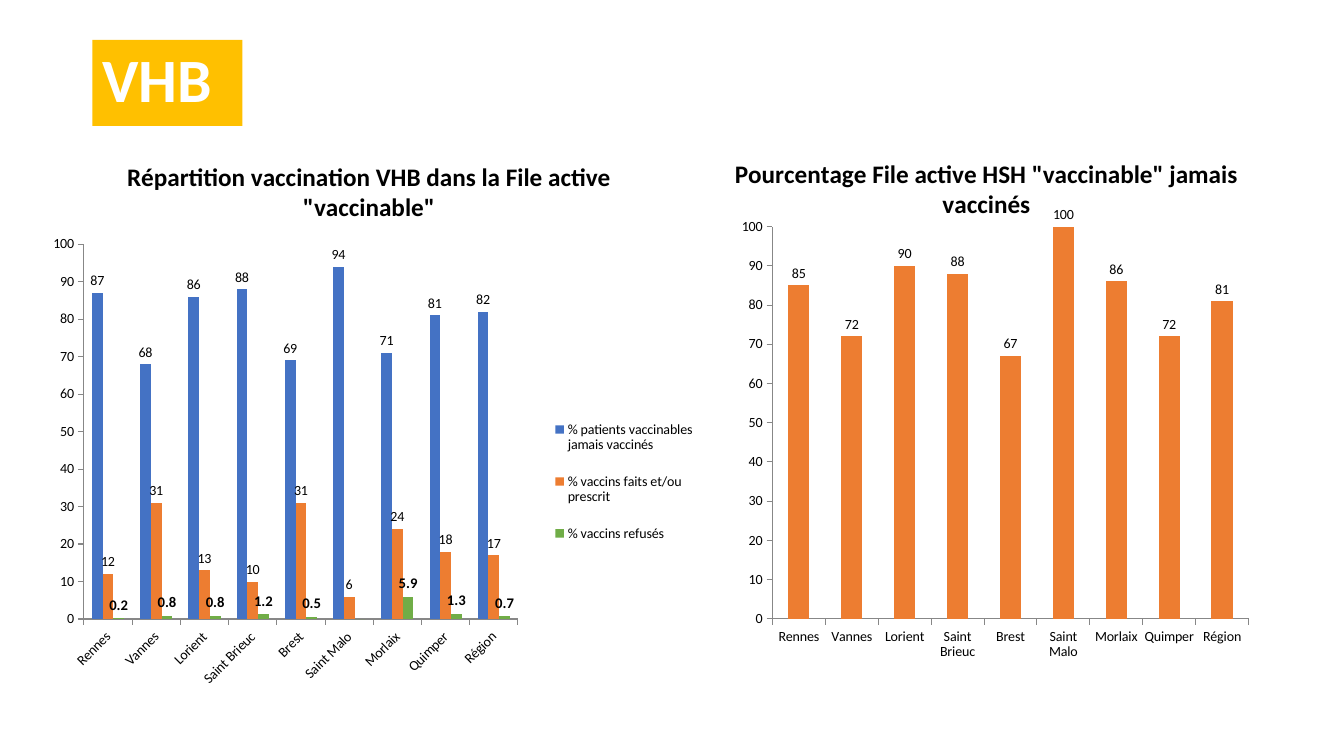
from lxml import etree
from pptx import Presentation
from pptx.chart.data import CategoryChartData as ChartData
from pptx.dml.color import RGBColor
from pptx.enum.chart import XL_CHART_TYPE as ChartType
from pptx.enum.chart import XL_LABEL_POSITION as LabelPosition
from pptx.enum.chart import XL_LEGEND_POSITION as LegendPosition
from pptx.enum.chart import XL_TICK_MARK as TickMark
from pptx.enum.shapes import MSO_SHAPE as ShapeType
from pptx.enum.text import MSO_ANCHOR as Anchor
from pptx.enum.text import PP_ALIGN as Align
from pptx.oxml import parse_xml
from pptx.oxml.ns import nsdecls, qn
from pptx.util import Pt

EMU_PER_PX = 9525
CITIES = ["Rennes", "Vannes", "Lorient", "Saint Brieuc", "Brest",
          "Saint Malo", "Morlaix", "Quimper", "Région"]
BLUE, ORANGE, GREEN = "4472C4", "ED7D31", "70AD47"
VACCINATION = [
    ("% patients vaccinables jamais vaccinés", BLUE,
     [87, 68, 86, 88, 69, 94, 71, 81, 82]),
    ("% vaccins faits et/ou prescrit", ORANGE,
     [12, 31, 13, 10, 31, 6, 24, 18, 17]),
    ("% vaccins refusés", GREEN,
     [0.2, 0.8, 0.8, 1.2, 0.5, 0, 5.9, 1.3, 0.7]),
]
NEVER_VACCINATED = [
    ("% jamais vaccinés", ORANGE, [85, 72, 90, 88, 67, 100, 86, 72, 81]),
]


def px(length):
    return length * EMU_PER_PX


def color(value):
    return RGBColor.from_string(value)


def set_layout(parent, index, box, inner=False):
    for old in parent.findall(qn("c:layout")):
        parent.remove(old)
    layout = parse_xml(f"<c:layout {nsdecls('c')}><c:manualLayout/></c:layout>")
    values = [("layoutTarget", "inner")] if inner else []
    values += [("xMode", "edge"), ("yMode", "edge"), *zip("xywh", box)]
    for name, value in values:
        etree.SubElement(layout[0], qn(f"c:{name}")).set("val", str(value))
    parent.insert(index, layout)


class SlideBuilder:
    """Holds the slide and its style, and adds each kind of element."""

    font = "Calibri"
    text_color = "000000"
    axis_color = "878787"
    chart_size = 10

    def __init__(self, presentation):
        self.slide = presentation.slides.add_slide(presentation.slide_layouts[6])

    def style_font(self, font, size, bold=False, font_color=text_color):
        font.name = self.font
        font.size = Pt(size)
        font.bold = bold
        font.color.rgb = color(font_color)

    def banner(self, text, box, fill):
        shape = self.slide.shapes.add_shape(ShapeType.RECTANGLE, *map(px, box))
        shape.shadow.inherit = False
        shape.fill.solid()
        shape.fill.fore_color.rgb = color(fill)
        shape.line.fill.background()
        frame = shape.text_frame
        frame.word_wrap = True
        frame.vertical_anchor = Anchor.MIDDLE
        paragraph = frame.paragraphs[0]
        paragraph.text = text
        paragraph.alignment = Align.LEFT
        paragraph.line_spacing = 0.9
        self.style_font(paragraph.font, 44, True, "FFFFFF")

    def column_chart(self, title, series, box, plot_box):
        data = ChartData()
        data.categories = CITIES
        for name, _, values in series:
            data.add_series(name, values)
        chart = self.slide.shapes.add_chart(
            ChartType.COLUMN_CLUSTERED, *map(px, box), data).chart
        self.style_font(chart.font, self.chart_size)
        chart.font._element.getparent().getparent().getparent().addprevious(
            parse_xml(f"<c:spPr {nsdecls('c', 'a')}><a:noFill/>"
                      "<a:ln><a:noFill/></a:ln></c:spPr>"))
        chart.has_legend = False
        chart.has_title = True
        paragraph = chart.chart_title.text_frame.paragraphs[0]
        paragraph.text = title
        self.style_font(paragraph.font, 18, True)
        chart.value_axis.minimum_scale = 0
        chart.value_axis.maximum_scale = 100
        chart.value_axis.major_unit = 10
        for axis in (chart.category_axis, chart.value_axis):
            axis.has_major_gridlines = False
            axis.major_tick_mark = TickMark.OUTSIDE
            axis.format.line.color.rgb = color(self.axis_color)
            self.style_font(axis.tick_labels.font, self.chart_size)
        plot = chart.plots[0]
        plot.gap_width = 150
        plot.overlap = 0
        plot.vary_by_categories = False
        for column, (_, fill, _) in zip(plot.series, series):
            column.format.fill.solid()
            column.format.fill.fore_color.rgb = color(fill)
            self.labels(column.data_labels, self.chart_size)
        set_layout(chart._chartSpace.chart.plotArea, 0, plot_box, inner=True)
        return chart

    def labels(self, labels, size, bold=False, number_format="0"):
        labels.show_value = True
        labels.position = LabelPosition.OUTSIDE_END
        labels.number_format = number_format
        labels.number_format_is_linked = False
        self.style_font(labels.font, size, bold)

    def legend(self, chart, box):
        chart.has_legend = True
        chart.legend.position = LegendPosition.RIGHT
        chart.legend.include_in_layout = False
        self.style_font(chart.legend.font, self.chart_size)
        set_layout(chart.legend._element, 1, box)

    def tilt_categories(self, chart, degrees):
        body = chart.category_axis._element.find(
            f"{qn('c:txPr')}/{qn('a:bodyPr')}")
        body.set("rot", str(degrees * 60000))
        body.set("vert", "horz")


def main():
    presentation = Presentation()
    presentation.slide_width = px(1280)
    presentation.slide_height = px(720)
    builder = SlideBuilder(presentation)
    builder.banner("VHB", (88, 38, 143, 82), "FFC000")
    vaccination = builder.column_chart(
        'Répartition vaccination VHB dans la File active "vaccinable"',
        VACCINATION, (32, 131, 639, 546), (0.075, 0.186, 0.647, 0.654))
    refused = vaccination.plots[0].series[2]
    builder.labels(refused.data_labels, 10.5, True, "0.0;;")
    builder.legend(vaccination, (0.77, 0.46, 0.22, 0.28))
    builder.tilt_categories(vaccination, -45)
    builder.column_chart(
        'Pourcentage File active HSH "vaccinable" jamais vaccinés',
        NEVER_VACCINATED, (625, 129, 629, 502), (0.176, 0.173, 0.721, 0.744))
    presentation.save("out.pptx")


if __name__ == "__main__":
    main()
